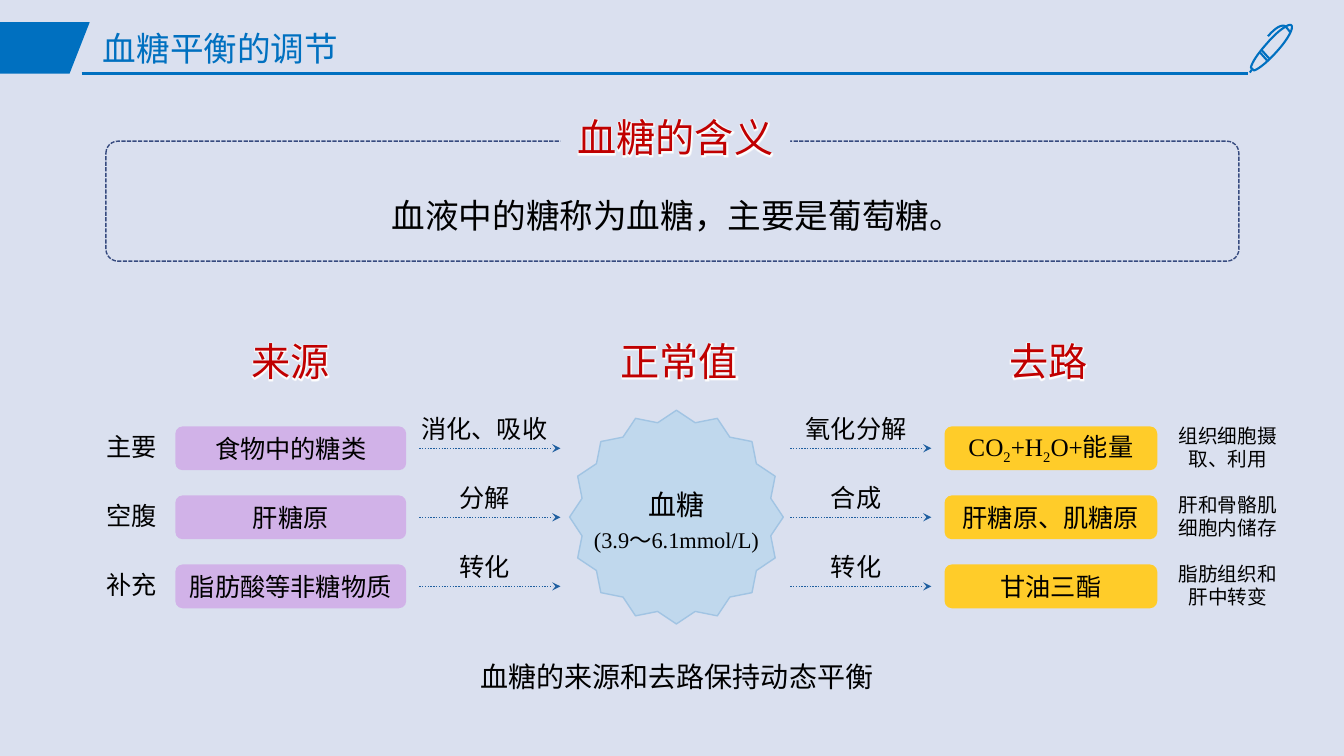
"""Build the slide on the regulation of blood sugar balance."""
from dataclasses import dataclass
from typing import Any, NamedTuple, Optional

from lxml.etree import SubElement as Sub
from pptx import Presentation
from pptx.dml.color import RGBColor
from pptx.enum.dml import MSO_LINE as Dash
from pptx.enum.shapes import MSO_CONNECTOR as Wire, MSO_SHAPE as Form
from pptx.enum.text import MSO_ANCHOR as Anchor, MSO_AUTO_SIZE as Fit, PP_ALIGN as Align
from pptx.oxml import parse_xml
from pptx.oxml.ns import nsdecls, qn
from pptx.util import Emu, Inches, Pt

PALE = RGBColor(0xDA, 0xE0, 0xEF)
BLUE = RGBColor(0x00, 0x70, 0xC0)
NAVY = RGBColor(0x37, 0x4B, 0x7F)
STEEL = RGBColor(0x1F, 0x5F, 0xA0)
SKY = RGBColor(0xC0, 0xD8, 0xED)
RIM = RGBColor(0xA1, 0xC4, 0xE3)
LILAC = RGBColor(0xD1, 0xB2, 0xE8)
GOLD = RGBColor(0xFF, 0xCC, 0x29)
RED = RGBColor(0xC0, 0x00, 0x00)
BLACK = RGBColor(0x00, 0x00, 0x00)
SANS, SERIF = "Noto Sans CJK SC", "Times New Roman"
WIDE, HIGH = Inches(13.333), Inches(7.5)
TOP, STEP, TALL = 56.4, 9.13, 5.8


class Area(NamedTuple):
    """Left, top, width and height in percent of the slide."""
    x: float
    y: float
    w: float
    h: float


class Line(NamedTuple):
    """Outline colour, width in points and dash."""
    color: RGBColor
    width: float = 1
    dash: Optional[Dash] = None


@dataclass
class Text:
    """One paragraph; parts between underscores are subscripts."""
    words: str
    size: float = 18
    font: str = SANS
    color: RGBColor = BLACK
    align: Align = Align.CENTER
    gap: float = 1.0
    glow: bool = False


@dataclass
class Block:
    """A preset shape with its look and text."""
    area: Area
    form: Form
    fill: Optional[RGBColor] = None
    line: Optional[Line] = None
    texts: tuple[Text, ...] = ()
    adj: Optional[float] = None
    frame: Optional[dict[str, Any]] = None


class Row(NamedTuple):
    """One source and one fate of blood sugar."""
    state: str
    source: str
    gain: str
    loss: str
    fate: str
    note: str


ROWS = (
    Row("主要", "食物中的糖类", "消化、吸收", "氧化分解", "CO_2_+H_2_O+能量", "组织细胞摄取、利用"),
    Row("空腹", "肝糖原", "分解", "合成", "肝糖原、肌糖原", "肝和骨骼肌细胞内储存"),
    Row("补充", "脂肪酸等非糖物质", "转化", "转化", "甘油三酯", "脂肪组织和肝中转变"),
)
HEADS = (("血糖的含义", 41.7, 14.4), ("正常值", 42, 44), ("来源", 13.05, 44), ("去路", 69.45, 44))
BAND = ((0, 2.93), ((6.68, 2.93),), ((5.18, 9.73),), ((0, 9.73),), ((0, 2.93),))
PEN = (
    ((96.08, 3.33), ((95.93, 3.07), (95.1, 4), (94.28, 5.73)),
     ((93.6, 7.07), (93.15, 8.27), (93.08, 8.93)), ((93.3, 9.33),),
     ((93.6, 9.2), (94.28, 8.27), (94.95, 6.93)),
     ((95.78, 5.33), (96.3, 3.73), (96.08, 3.33))),
    ((94.28, 8), ((93.75, 6.93),)),
    ((93.9, 6.67), ((94.43, 7.73),)),
    ((93.15, 9.2), ((93, 9.6),)),
    ((96, 4.27), ((96, 4.27), (95.85, 3.87), (95.63, 3.47)),
     ((95.63, 3.47), (95.25, 2.93), (94.35, 4.8))),
)


def across(part: float) -> Emu:
    """Turn a percent of the width into a length."""
    return Emu(round(WIDE * part / 100))


def down(part: float) -> Emu:
    """Turn a percent of the height into a length."""
    return Emu(round(HIGH * part / 100))


def place(area: Area) -> tuple[Emu, ...]:
    """Turn an area into lengths."""
    return across(area.x), down(area.y), across(area.w), down(area.h)


def put(item: Any, values: dict[str, Any]) -> None:
    """Set every attribute named in the values."""
    for name, value in values.items():
        setattr(item, name, value)


def paint(shape: Any, fill: Optional[RGBColor], line: Optional[Line]) -> None:
    """Give a shape its fill and outline."""
    shape.shadow.inherit = False
    if fill is None:
        shape.fill.background()
    else:
        shape.fill.solid()
        shape.fill.fore_color.rgb = fill
    if line is None:
        shape.line.fill.background()
    else:
        ink(shape.line, line)


def ink(pen: Any, line: Line) -> None:
    """Format an outline."""
    pen.color.rgb = line.color
    put(pen, {"width": Pt(line.width), "dash_style": line.dash})


def write(frame: Any, texts: tuple[Text, ...], looks: dict[str, Any]) -> None:
    """Fill a text frame with paragraphs."""
    put(frame, {"word_wrap": True, "auto_size": Fit.NONE, **looks})
    for i, text in enumerate(texts):
        para = frame.add_paragraph() if i else frame.paragraphs[0]
        put(para, {"alignment": text.align, "line_spacing": text.gap})
        for j, part in enumerate(text.words.split("_")):
            run = para.add_run()
            run.text = part
            put(run.font, {"size": Pt(text.size), "name": text.font})
            run.font.color.rgb = text.color
            props = run.font._element
            Sub(props, qn("a:ea")).set("typeface", SANS)
            if j % 2:
                props.set("baseline", "-25000")
            if text.glow:
                props.find(qn("a:solidFill")).addnext(parse_xml(
                    f'<a:effectLst {nsdecls("a")}><a:glow rad="38100">'
                    '<a:srgbClr val="FFFFFF"/></a:glow></a:effectLst>'))


def block(shapes: Any, item: Block) -> None:
    """Draw a preset shape."""
    shape = shapes.add_shape(item.form, *place(item.area))
    if item.adj is not None:
        shape.adjustments[0] = item.adj
    paint(shape, item.fill, item.line)
    write(shape.text_frame, item.texts, {"vertical_anchor": Anchor.MIDDLE, **(item.frame or {})})


def label(shapes: Any, area: Area, text: Text, wrap: bool = False) -> None:
    """Draw a text box."""
    box = shapes.add_textbox(*place(area))
    write(box.text_frame, (text,), {"word_wrap": wrap})


def rule(shapes: Any, left: float, right: float, y: float, line: Line, tip: bool = False) -> None:
    """Draw a level line, with an arrowhead if asked."""
    wire = shapes.add_connector(Wire.STRAIGHT, across(left), down(y), across(right), down(y))
    ink(wire.line, line)
    if tip:
        Sub(wire.line._get_or_add_ln(), qn("a:tailEnd")).set("type", "stealth")
    Sub(wire._element.spPr, qn("a:effectLst"))


def trace(stroke: tuple) -> list[tuple[Emu, Emu]]:
    """Turn a stroke of straight and cubic parts into points."""
    spots = [stroke[0]]
    for part in stroke[1:]:
        if len(part) == 1:
            spots += part
            continue
        knots = (spots[-1], *part)
        for t in (n / 12 for n in range(1, 13)):
            mix = ((1 - t) ** 3, 3 * t * (1 - t) ** 2, 3 * t * t * (1 - t), t ** 3)
            spots.append(tuple(sum(m * k[d] for m, k in zip(mix, knots)) for d in (0, 1)))
    return [(across(x), down(y)) for x, y in spots]


def sketch(shapes: Any, strokes: tuple, fill: Optional[RGBColor], line: Optional[Line]) -> None:
    """Draw strokes as one free shape."""
    first, *rest = map(trace, strokes)
    form = shapes.build_freeform(*first[0])
    form.add_line_segments(first[1:], close=True)
    for spots in rest:
        form.move_to(*spots[0])
        form.add_line_segments(spots[1:], close=False)
    paint(form.convert_to_shape(), fill, line)


def flow(shapes: Any, row: Row, y: float) -> None:
    """Draw one row of the diagram."""
    sides = ((13.05, 17.18, LILAC, row.source, 31.2, 30.44, row.gain),
             (70.28, 15.83, GOLD, row.fate, 58.8, 58.1, row.loss))
    for x, w, fill, name, start, left, step in sides:
        block(shapes, Block(Area(x, y, w, TALL), Form.ROUNDED_RECTANGLE, fill,
                            texts=(Text(name, font=SERIF),)))
        rule(shapes, start, start + 10.5, y + TALL / 2, Line(STEEL, 1, Dash.ROUND_DOT), True)
        label(shapes, Area(left, y - 2.4, 11.2, 5.33), Text(step))
    label(shapes, Area(7.2, y, 5.4, 5.33), Text(row.state, align=Align.LEFT))
    label(shapes, Area(86.85, y - 1, 9, 7.6), Text(row.note, 14), True)


def main() -> None:
    """Build and save the slide."""
    deck = Presentation()
    put(deck, {"slide_width": WIDE, "slide_height": HIGH})
    slide = deck.slides.add_slide(deck.slide_layouts[5])
    slide.background.fill.solid()
    slide.background.fill.fore_color.rgb = PALE
    shapes = slide.shapes
    put(shapes.title, dict(zip(("left", "top", "width", "height"),
                               place(Area(6.9, 2.8, 86.25, 7.87)))))
    write(shapes.title.text_frame, (Text("血糖平衡的调节", 24, SERIF, BLUE, Align.LEFT, 0.9),),
          {"vertical_anchor": Anchor.MIDDLE})
    sketch(shapes, (BAND,), BLUE, None)
    rule(shapes, 6.08, 92.85, 9.73, Line(BLUE, 1.5))
    sketch(shapes, PEN, None, Line(BLUE, 1.5))
    block(shapes, Block(Area(7.88, 18.67, 84.3, 15.87), Form.ROUNDED_RECTANGLE,
                        line=Line(NAVY, 1, Dash.SQUARE_DOT), adj=0.1))
    for words, x, y in HEADS:
        block(shapes, Block(Area(x, y, 17.1, 7.6), Form.RECTANGLE, PALE,
                            texts=(Text(words, 28, SERIF, RED, glow=True),),
                            frame={"vertical_anchor": Anchor.TOP}))
    label(shapes, Area(10.95, 22.4, 78.9, 8.67),
          Text("血液中的糖称为血糖，主要是葡萄糖。", 24, gap=1.5), True)
    bare = dict.fromkeys(("margin_left", "margin_top", "margin_right", "margin_bottom"), 0)
    block(shapes, Block(Area(42.38, 54.27, 15.9, 28.27), Form.STAR_16_POINT, SKY, Line(RIM),
                        (Text("血糖", 20, gap=1.2), Text("(3.9～6.1mmol/L)", 16, SERIF, gap=1.2)),
                        0.45, {"word_wrap": False, **bare}))
    for i, row in enumerate(ROWS):
        flow(shapes, row, TOP + i * STEP)
    label(shapes, Area(34.88, 86.53, 30.98, 5.87), Text("血糖的来源和去路保持动态平衡", 20))
    deck.save("out.pptx")


if __name__ == "__main__":
    main()
